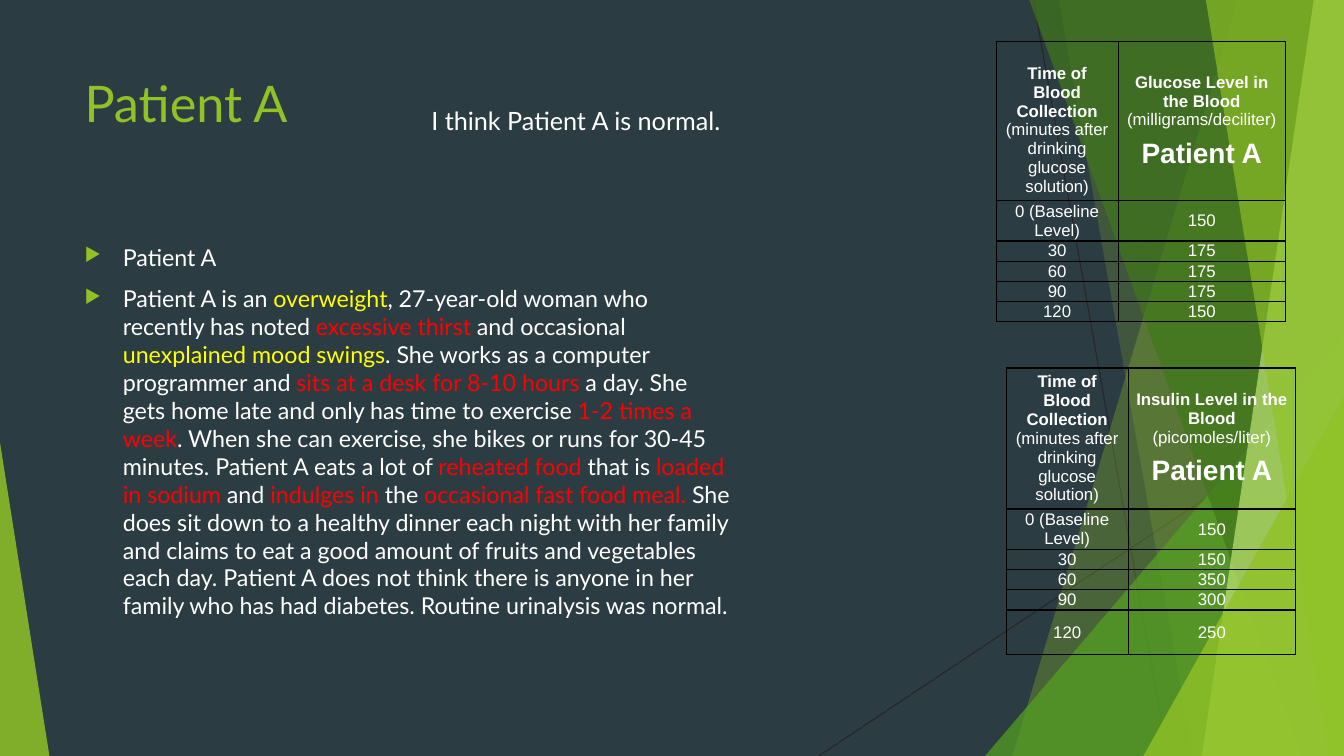
import lxml.etree
import pptx
import pptx.dml.color
import pptx.enum.shapes
import pptx.enum.text
import pptx.oxml
import pptx.oxml.ns
import pptx.util

Inches = pptx.util.Inches
Pt = pptx.util.Pt
qn = pptx.oxml.ns.qn
COLORS = {
    "night": "2C3C43", "ray": "262626", "lime": "90C226", "leaf": "54A021",
    "forest": "3F7819", "pale": "C0E474", "white": "FFFFFF", "black": "000000",
    "yellow": "FFFF00", "red": "FF0000",
}
NO_TABLE_STYLE = "{2D5ABB26-0587-4C30-8999-92F81FD0307C}"
WIDTH, HEIGHT = 13.33, 7.5


def rgb(color):
    """Return the named colour as an RGB value."""
    return pptx.dml.color.RGBColor.from_string(COLORS[color])


def write(paragraph, text, size=12, font="Arial", color="white", bold=False):
    """Append formatted text to a paragraph."""
    run = paragraph.add_run()
    run.text = text
    run.font.size = Pt(size)
    run.font.name = font
    run.font.bold = bold
    run.font.color.rgb = rgb(color)


def child(parent, tag, **attributes):
    """Append a DrawingML element to a parent."""
    return lxml.etree.SubElement(parent, qn(tag), attributes)


class SlideBuilder:
    """Hold the style and the current slide."""

    def __init__(self, deck, font="Lato"):
        """Add a blank slide with the dark background."""
        self.font = font
        self.slide = deck.slides.add_slide(deck.slide_layouts[6])
        self.shapes = self.slide.shapes
        self.slide.background.fill.solid()
        self.slide.background.fill.fore_color.rgb = rgb("night")

    def ray(self, start, end):
        """Draw a thin line."""
        line = self.shapes.add_connector(
            pptx.enum.shapes.MSO_CONNECTOR.STRAIGHT,
            *(Inches(value) for value in start + end))
        line.line.color.rgb = rgb("ray")
        line.line.width = Pt(0.75)
        child(line._element.spPr, "a:effectLst")

    def tint(self, shape, color, opacity):
        """Give a shape a translucent fill without outline."""
        shape.shadow.inherit = False
        shape.fill.solid()
        shape.fill.fore_color.rgb = rgb(color)
        shape.line.fill.background()
        solid = shape._element.spPr.find(qn("a:solidFill"))
        child(solid[0], "a:alpha", val=str(opacity * 1000))

    def facet(self, top_left, bottom_left, color, opacity):
        """Draw a full-height facet that ends at the right edge."""
        corners = [(top_left, 0), (WIDTH, 0), (WIDTH, HEIGHT), (bottom_left, HEIGHT)]
        points = [(Inches(x), Inches(y)) for x, y in corners]
        builder = self.shapes.build_freeform(*points[0], scale=1.0)
        builder.add_line_segments(points[1:], close=True)
        self.tint(builder.convert_to_shape(), color, opacity)

    def triangle(self, left, top, width, apex, color, opacity):
        """Draw a triangle that stands on the bottom edge."""
        shape = self.shapes.add_shape(
            pptx.enum.shapes.MSO_SHAPE.ISOSCELES_TRIANGLE,
            Inches(left), Inches(top), Inches(width), Inches(HEIGHT - top))
        shape.adjustments[0] = apex
        self.tint(shape, color, opacity)

    def text(self, box, paragraphs, size, bullets=False):
        """Add a text box of paragraphs made of (text, colour) pieces."""
        frame = self.shapes.add_textbox(*(Inches(v) for v in box)).text_frame
        frame.word_wrap = True
        for index, pieces in enumerate(paragraphs):
            paragraph = frame.add_paragraph() if index else frame.paragraphs[0]
            for words, color in pieces:
                write(paragraph, words, size=size, font=self.font, color=color)
            if bullets:
                self.bullet(paragraph)

    def bullet(self, paragraph):
        """Give a paragraph a hanging lime arrow."""
        paragraph.space_before = Pt(10)
        properties = paragraph._p.get_or_add_pPr()
        properties.set("marL", str(Inches(0.38)))
        properties.set("indent", str(-Inches(0.38)))
        child(child(properties, "a:buClr"), "a:srgbClr", val=COLORS["lime"])
        child(properties, "a:buSzPct", val="80000")
        child(properties, "a:buChar", char="▶")

    def cell(self, cell, paragraphs, top_margin=0):
        """Fill one bordered cell with centred paragraphs."""
        cell.margin_left = cell.margin_right = Inches(0.07)
        cell.margin_top, cell.margin_bottom = Inches(top_margin), 0
        cell.vertical_anchor = pptx.enum.text.MSO_ANCHOR.MIDDLE
        for index, pieces in enumerate(paragraphs):
            frame = cell.text_frame
            paragraph = frame.add_paragraph() if index else frame.paragraphs[0]
            paragraph.alignment = pptx.enum.text.PP_ALIGN.CENTER
            if index < len(paragraphs) - 1:
                paragraph.space_after = Pt(6)
            for words, style in pieces:
                write(paragraph, words, **style)
        properties = cell._tc.get_or_add_tcPr()
        for side in "LRTB":
            border = child(properties, "a:ln" + side, w=str(Pt(1)))
            child(child(border, "a:solidFill"), "a:srgbClr", val=COLORS["black"])
        cell.fill.background()

    def table(self, left, top, heights, measure, unit, levels, header_margin=0):
        """Add a table of blood levels over time."""
        widths = [1.21, 1.66]
        frame = self.shapes.add_table(
            len(heights), len(widths), Inches(left), Inches(top),
            Inches(sum(widths)), Inches(sum(heights)))
        table = frame.table
        table.first_row = table.horz_banding = False
        table._tbl.tblPr.find(qn("a:tableStyleId")).text = NO_TABLE_STYLE
        for column, width in zip(table.columns, widths):
            column.width = Inches(width)
        for row, height in zip(table.rows, heights):
            row.height = Inches(height)
        bold = {"bold": True}
        self.cell(table.cell(0, 0), [[
            ("Time of Blood Collection", bold),
            (" (minutes after drinking glucose solution)", {})]], header_margin)
        self.cell(table.cell(0, 1), [
            [(measure, bold), (f" ({unit})", {})],
            [("Patient A", {"size": 20, "bold": True})]])
        times = ["0 (Baseline Level)", "30", "60", "90", "120"]
        for row, entries in enumerate(zip(times, levels), 1):
            for column, entry in enumerate(entries):
                self.cell(table.cell(row, column), [[(str(entry), {})]])


def main():
    """Build and save the Patient A slide."""
    deck = pptx.Presentation()
    deck.slide_width, deck.slide_height = Inches(WIDTH), Inches(HEIGHT)
    page = SlideBuilder(deck)

    page.ray((10.25, 0), (11.58, HEIGHT))
    page.ray((WIDTH, 4.03), (8.12, HEIGHT))
    page.facet(12.28, 10.04, "lime", 30)
    page.facet(10.5, 11.83, "lime", 20)
    page.triangle(9.77, 3.33, 3.56, 1, "leaf", 72)
    page.facet(10.21, 12.91, "forest", 70)
    page.facet(13.03, 11.92, "pale", 70)
    page.facet(11.96, 13.18, "lime", 65)
    page.triangle(11.34, 3.93, 1.99, 1, "lime", 80)
    page.triangle(0, 4.39, 0.49, 0, "lime", 85)

    page.text((0.74, 0.67, 9.4, 1.44), [[("Patient A", "lime")]], 36)
    history = [
        ("Patient A is an ", "white"), ("overweight", "yellow"),
        (", 27-year-old woman who recently has noted ", "white"),
        ("excessive thirst ", "red"), ("and occasional ", "white"),
        ("unexplained mood swings", "yellow"),
        (". She works as a computer programmer and ", "white"),
        ("sits at a desk for 8-10 hours ", "red"),
        ("a day. She gets home late and only has time to exercise ", "white"),
        ("1-2 times a week", "red"),
        (". When she can exercise, she bikes or runs for 30-45 minutes. "
         "Patient A eats a lot of ", "white"),
        ("reheated food ", "red"), ("that is ", "white"),
        ("loaded in sodium ", "red"), ("and", "white"),
        (" indulges in ", "red"), ("the", "white"),
        (" occasional fast food meal. ", "red"),
        ("She does sit down to a healthy dinner each night with her family and "
         "claims to eat a good amount of fruits and vegetables each day. "
         "Patient A does not think there is anyone in her family who has had "
         "diabetes. Routine urinalysis was normal.", "white"),
    ]
    page.text((0.74, 2.36, 6.61, 4.24), [[("Patient A", "white")], history],
              16.6, bullets=True)
    page.table(9.88, 0.41, [1.5, 0.37] + [0.18] * 4, "Glucose Level in the Blood",
               "milligrams/deciliter", [150, 175, 175, 175, 150], header_margin=0.18)
    page.table(9.98, 3.65, [1.3, 0.37] + [0.18] * 3 + [0.44],
               "Insulin Level in the Blood", "picomoles/liter",
               [150, 150, 350, 300, 250])
    page.text((4.18, 1, 4.97, 0.4), [[("I think Patient A is normal.", "white")]], 18)
    deck.save("out.pptx")


if __name__ == "__main__":
    main()
